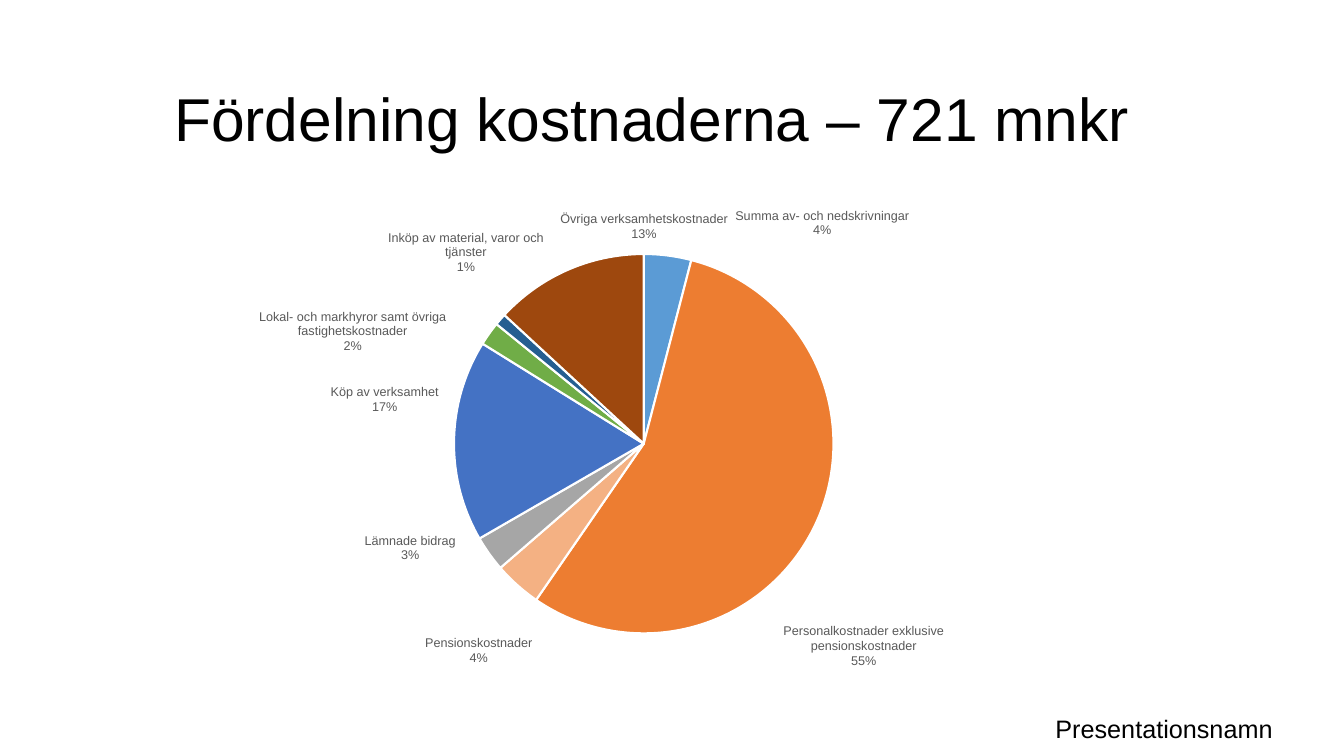
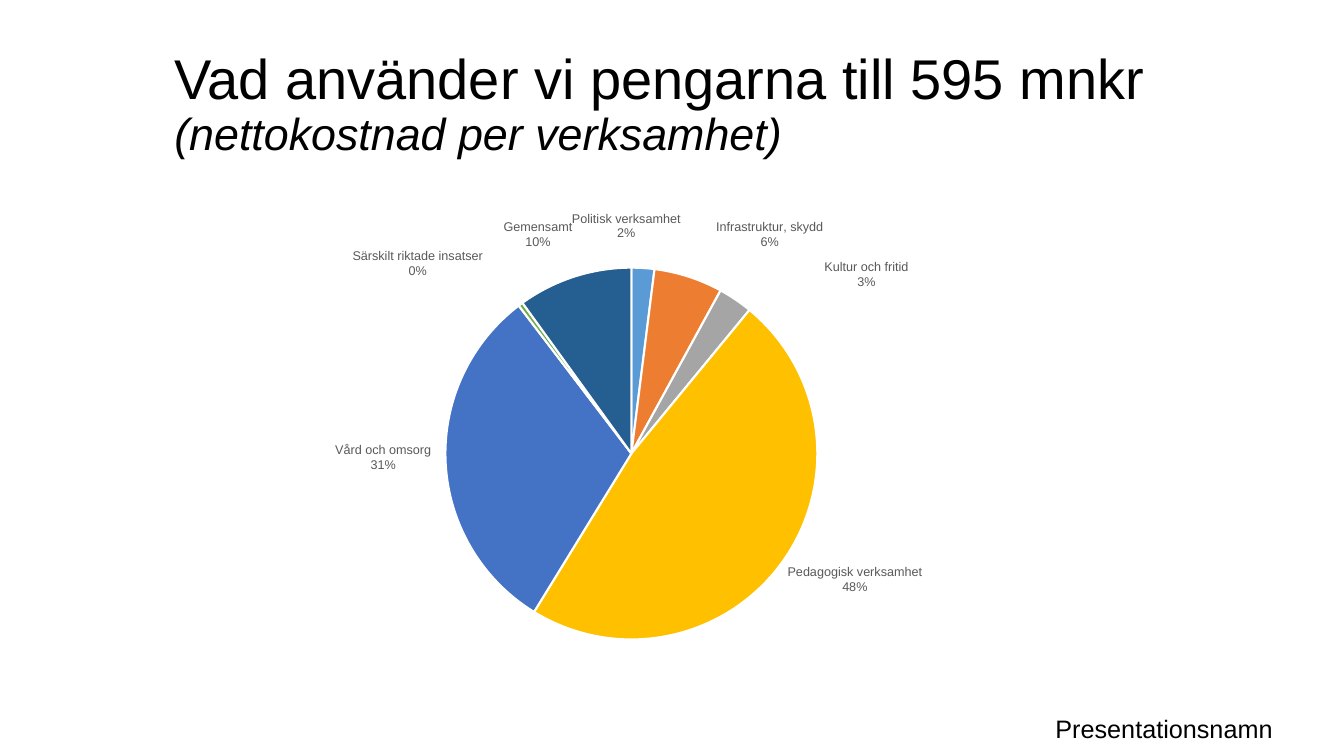
"""Build two slides with pie charts of costs and of what the money is used for."""
from copy import deepcopy

from pptx import Presentation
from pptx import util as u
from pptx.chart import data
from pptx.dml import color
from pptx.enum import chart as kinds, text
from pptx.oxml import parse_xml
from pptx.oxml.ns import nsdecls, qn

FONT = "Arial"
COLORS = {
    "text": "000000", "label": "595959", "white": "FFFFFF",
    "sky": "5B9BD5", "orange": "ED7D31", "peach": "F4B183",
    "grey": "A6A6A6", "silver": "A5A5A5", "blue": "4472C4",
    "green": "70AD47", "navy": "255E91", "brown": "9E480E",
    "gold": "FFC000",
}
COSTS = [
    ("Summa av- och nedskrivningar", -4, "sky", (0.07, -0.02)),
    ("Personalkostnader exklusive pensionskostnader", -55, "orange", (-0.04, 0.17)),
    ("Pensionskostnader", -4, "peach", (0.02, 0.08)),
    ("Lämnade bidrag", -3, "grey", (-0.03, -0.04)),
    ("Köp av verksamhet", -17, "blue", (-0.01, -0.07)),
    ("Lokal- och markhyror samt övriga fastighetskostnader", -2, "green", (-0.04, 0.04)),
    ("Inköp av material, varor och tjänster", -1, "navy", (0.05, -0.07)),
    ("Övriga verksamhetskostnader", -13, "brown", (0.17, -0.04)),
]
ACTIVITIES = [
    ("Politisk verksamhet", 2, "sky", (-0.02, -0.04)),
    ("Infrastruktur, skydd", 6, "orange", (0.03, -0.04)),
    ("Kultur och fritid", 3, "silver", (0.1, -0.01)),
    ("Pedagogisk verksamhet", 48, "gold", (0, 0)),
    ("Vård och omsorg", 31, "blue", (-0.01, -0.01)),
    ("Särskilt riktade insatser", 0.4, "green", (-0.04, -0.04)),
    ("Gemensamt", 10, "navy", (0, -0.04)),
]


def rgb(name):
    """Return the named colour."""
    return color.RGBColor.from_string(COLORS[name])


def style_font(font, size, shade="text", italic=None):
    """Set the shared typeface with a size and colour."""
    font.name, font.size, font.italic = FONT, u.Pt(size), italic
    font.color.rgb = rgb(shade)


def add_text(page, spans, *, area, anchor, spacing=None):
    """Add a text box with one paragraph of (wording, size, italic) spans."""
    box = page.shapes.add_textbox(*map(u.Inches, area))
    frame = box.text_frame
    frame.word_wrap = True
    frame.vertical_anchor = anchor
    para = frame.paragraphs[0]
    para.line_spacing = spacing
    for wording, size, italic in spans:
        span = para.add_run()
        span.text = wording
        style_font(span.font, size, italic=italic)


def manual_layout(settings):
    """Return a chart layout element with the given settings."""
    parts = "".join(f'<c:{tag} val="{value}"/>' for tag, value in settings.items())
    return parse_xml(f'<c:layout {nsdecls("c")}><c:manualLayout>{parts}'
                     '</c:manualLayout></c:layout>')


def place_plot(chart, plot_area):
    """Fix the inner plot area as fractions of the chart."""
    holder = chart.element.find(".//" + qn("c:plotArea"))
    for old in holder.findall(qn("c:layout")):
        holder.remove(old)
    settings = {"layoutTarget": "inner", "xMode": "edge", "yMode": "edge"}
    settings.update(zip("xywh", plot_area))
    holder.insert(0, manual_layout(settings))


def label_slices(chart, slices):
    """Show category and share outside each slice, moved by its offset."""
    labels = chart.plots[0].series[0].data_labels
    style_font(labels.font, 9, "label")
    labels.number_format = '0"%";0"%"'
    labels.number_format_is_linked = False
    labels.position = kinds.XL_LABEL_POSITION.OUTSIDE_END
    labels.show_category_name = labels.show_value = True
    labels.show_percentage = labels.show_series_name = labels.show_legend_key = False
    holder = chart.element.find(".//" + qn("c:ser")).find(qn("c:dLbls"))
    holder.find(".//" + qn("a:bodyPr")).set("wrap", "square")
    for leader in holder.findall(qn("c:showLeaderLines")):
        holder.remove(leader)
    holder.append(parse_xml(f'<c:separator {nsdecls("c")}>\n</c:separator>'))
    shared = list(holder)
    for index, (*_, (x, y)) in enumerate(slices):
        label = parse_xml(f'<c:dLbl {nsdecls("c")}><c:idx val="{index}"/></c:dLbl>')
        label.append(manual_layout({"x": x, "y": y}))
        label.extend(deepcopy(part) for part in shared)
        holder.insert(index, label)
    holder.append(parse_xml(f'<c:showLeaderLines {nsdecls("c")} val="0"/>'))


def add_pie(page, slices, *, area, plot_area):
    """Add a pie chart with coloured, labelled slices."""
    chart_data = data.CategoryChartData()
    chart_data.categories = [name for name, *_ in slices]
    chart_data.add_series("Series 1", [value for _, value, *_ in slices])
    chart = page.shapes.add_chart(
        kinds.XL_CHART_TYPE.PIE, *map(u.Inches, area), chart_data).chart
    chart.has_title = chart.has_legend = False
    style_font(chart.font, 10)
    plot = chart.plots[0]
    plot.vary_by_categories = True
    for index, (_, _, shade, _) in enumerate(slices):
        style = plot.series[0].points[index].format
        style.fill.solid()
        style.fill.fore_color.rgb = rgb(shade)
        style.line.color.rgb = rgb("white")
        style.line.width = u.Pt(1.5)
    place_plot(chart, plot_area)
    label_slices(chart, slices)


def add_page(deck, title, *, title_top, slices, area, plot_area):
    """Add a slide with title, footer and pie chart."""
    page = deck.slides.add_slide(deck.slide_layouts[6])
    add_text(page, title, area=(1.63, title_top, 10.61, 1.01),
             anchor=text.MSO_ANCHOR.BOTTOM, spacing=0.9)
    add_text(page, [("Presentationsnamn", 18, None)], area=(10.37, 7.03, 2.86, 0.4),
             anchor=text.MSO_ANCHOR.MIDDLE)
    add_pie(page, slices, area=area, plot_area=plot_area)


def main():
    """Build and save the deck."""
    deck = Presentation()
    deck.slide_width, deck.slide_height = u.Inches(13.33), u.Inches(7.5)
    add_page(deck, [("Fördelning kostnaderna – 721 mnkr", 43.2, None)],
             title_top=0.57, slices=COSTS, area=(1.93, 1.71, 9.48, 5.79),
             plot_area=(0.13, 0.14, 0.68, 0.65))
    add_page(deck, [("Vad använder vi pengarna till 595 mnkr ", 40, None),
                    ("(nettokostnad per verksamhet)", 32, True)],
             title_top=0.63, slices=ACTIVITIES, area=(2.06, 1.76, 8.49, 5.27),
             plot_area=(0.13, 0.17, 0.73, 0.7))
    deck.save("out.pptx")


if __name__ == "__main__":
    main()
